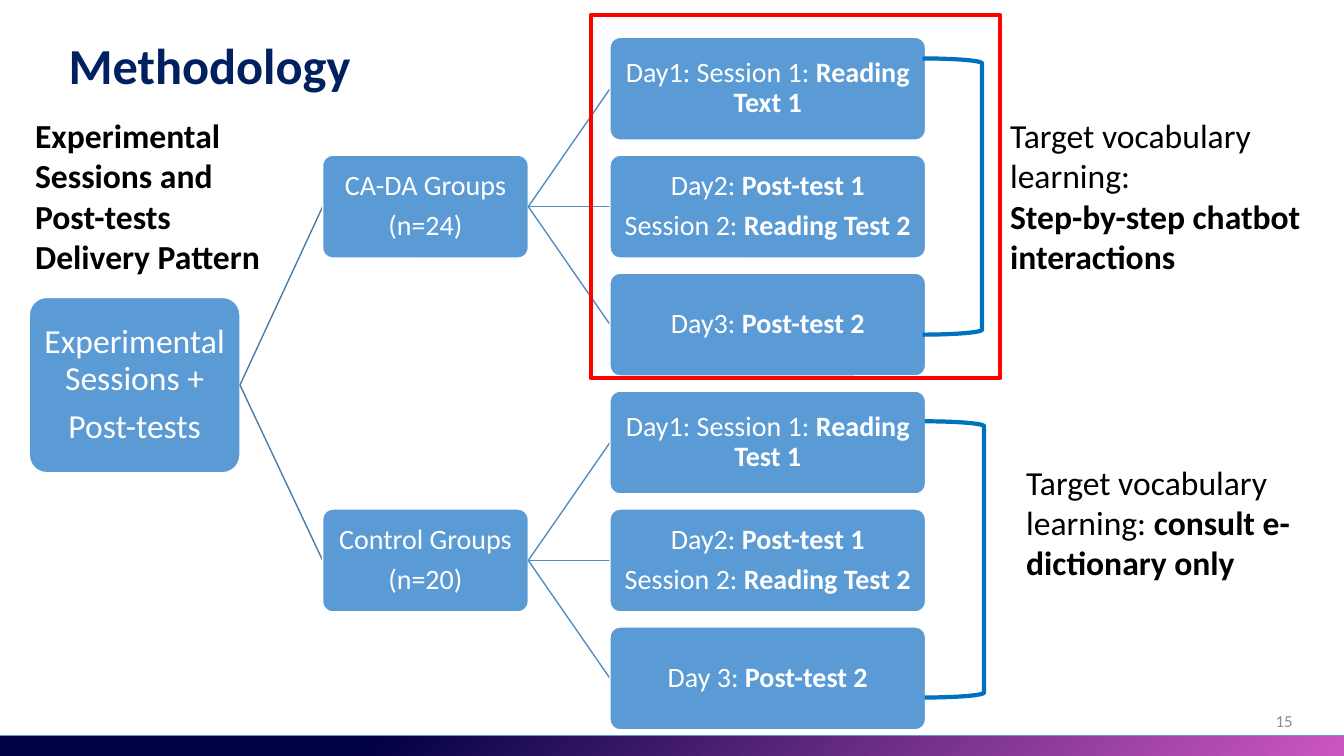
from lxml.etree import SubElement
from pptx import Presentation
from pptx.dml.color import RGBColor
from pptx.enum.shapes import MSO_CONNECTOR as CONN, MSO_SHAPE as SHAPE
from pptx.enum.text import MSO_ANCHOR as ANCHOR, PP_ALIGN as ALIGN
from pptx.oxml.ns import qn
from pptx.util import Emu, Pt

PX = 9144  # 100 px to the inch
FONT = "Calibri"
WHITE = RGBColor(0xFF, 0xFF, 0xFF)
BLACK = RGBColor(0, 0, 0)
NAVY = RGBColor(0x00, 0x20, 0x60)
GREY = RGBColor(0x8C, 0x8C, 0x8C)
BOX_BLUE = RGBColor(0x5B, 0x9B, 0xD5)
TRUNK_BLUE = RGBColor(0x49, 0x7C, 0xAB)
BRANCH_BLUE = RGBColor(0x53, 0x8D, 0xC1)
BRACKET_BLUE = RGBColor(0x00, 0x70, 0xC0)
RED = RGBColor(0xFF, 0, 0)
BAR_START = RGBColor(0x00, 0x00, 0x44)
BAR_END = RGBColor(0xCE, 0x57, 0xC1)

# Content: a text is a list of paragraphs, a paragraph a list of (words, bold)
TITLE = "Methodology"
PAGE = "15"
ROOT = [[("Experimental Sessions +", False)], [("Post-tests", False)]]
DAY2 = [[("Day2: ", False), ("Post-test 1", True)],
        [("Session 2: ", False), ("Reading Test 2", True)]]
GROUPS = [
    ([[("CA-DA Groups", False)], [("(n=24)", False)]],
     [[[("Day1: Session 1: ", False), ("Reading Text 1", True)]],
      DAY2,
      [[("Day3: ", False), ("Post-test 2", True)]]]),
    ([[("Control Groups", False)], [("(n=20)", False)]],
     [[[("Day1: Session 1: ", False), ("Reading Test 1", True)]],
      DAY2,
      [[("Day 3: ", False), ("Post-test 2", True)]]]),
]
NOTES = [
    ((25, 109, 250, 172),
     [[("Experimental Sessions and Post-tests Delivery Pattern", True)]]),
    ((992, 109, 317, 172),
     [[("Target vocabulary learning:", False)],
      [("Step-by-step chatbot interactions", True)]]),
    ((1008, 453, 300, 131),
     [[("Target vocabulary learning: ", False),
       ("consult e-dictionary only", True)]]),
]
BRACKETS = [(915, 58, 59, 274), (917, 418, 59, 274)]
RED_FRAME = (586, 15, 406, 360)

# Tree geometry in px
ROOT_BOX = (29, 295, 209, 174)
GROUP_X, GROUP_W = 320, 204
DAY_X, DAY_W = 605, 313
ROW_TOP, ROW_STEP, ROW_H = 37, 117, 102


def px(*lengths):
    return [Emu(n * PX) for n in lengths]


def write(tf, paragraphs, size, color, align=ALIGN.LEFT):
    tf.word_wrap = True
    for i, runs in enumerate(paragraphs):
        p = tf.paragraphs[0] if i == 0 else tf.add_paragraph()
        p.alignment = align
        p.font.name, p.font.size, p.font.color.rgb = FONT, Pt(size), color
        for words, bold in runs:
            r = p.add_run()
            r.text, r.font.bold = words, bold


def add_shape(kind, box, line, width, fill=None):
    sp = s.shapes.add_shape(kind, *px(*box))
    sp.shadow.inherit = False
    if fill is None:
        sp.fill.background()
    else:
        sp.fill.solid()
        sp.fill.fore_color.rgb = fill
    sp.line.color.rgb, sp.line.width = line, Pt(width)
    return sp


def add_text(box, paragraphs, size, color, align=ALIGN.LEFT):
    tf = s.shapes.add_textbox(*px(*box)).text_frame
    write(tf, paragraphs, size, color, align)
    return tf


def add_node(box, paragraphs, size, inset):
    sp = add_shape(SHAPE.ROUNDED_RECTANGLE, box, WHITE, 1, BOX_BLUE)
    sp.adjustments[0] = 0.1
    tf = sp.text_frame
    tf.vertical_anchor = ANCHOR.MIDDLE
    tf.margin_left = tf.margin_right = tf.margin_top = tf.margin_bottom = Emu(inset * PX)
    write(tf, paragraphs, size, WHITE, ALIGN.CENTER)
    for p in tf.paragraphs:
        p.line_spacing, p.space_after = 0.9, Pt(size * 0.35)


def add_link(x1, y1, x2, y2, color):
    c = s.shapes.add_connector(CONN.STRAIGHT, *px(x1, y1, x2, y2))
    c.line.color.rgb, c.line.width = color, Pt(1)
    SubElement(c._element.spPr, qn("a:effectLst"))


def row_top(row):
    return ROW_TOP + row * ROW_STEP


def row_mid(row):
    return row_top(row) + ROW_H // 2


prs = Presentation()
prs.slide_width, prs.slide_height = px(1333, 750)
s = prs.slides.add_slide(prs.slide_layouts[5])

# Bottom bar and page number
bar = add_shape(SHAPE.RECTANGLE, (-6, 730, 1339, 31), BOX_BLUE, 0.5)
bar.fill.gradient()
bar.fill.gradient_angle = 315
for stop, position, color in zip(bar.fill.gradient_stops, (0.27, 1), (BAR_START, BAR_END)):
    stop.position, stop.color.rgb = position, color
add_text((992, 695, 300, 40), [[(PAGE, False)]], 12, GREY,
         ALIGN.RIGHT).vertical_anchor = ANCHOR.MIDDLE

# Title
title = s.shapes.title
title.left, title.top, title.width, title.height = px(58, 36, 880, 89)
title.text_frame.vertical_anchor = ANCHOR.TOP
write(title.text_frame, [[(TITLE, True)]], 36, NAVY)
title.text_frame.paragraphs[0].line_spacing = 0.9

# Tree: root, groups, days
add_node(ROOT_BOX, ROOT, 24, 2)
root_right = ROOT_BOX[0] + ROOT_BOX[2]
root_mid = ROOT_BOX[1] + ROOT_BOX[3] // 2
for g, (group, days) in enumerate(GROUPS):
    first = g * len(days)
    middle = first + 1
    add_link(root_right, root_mid, GROUP_X, row_mid(middle), TRUNK_BLUE)
    add_node((GROUP_X, row_top(middle), GROUP_W, ROW_H), group, 20, 1)
    for row, day in enumerate(days, first):
        add_link(GROUP_X + GROUP_W, row_mid(middle), DAY_X, row_mid(row), BRANCH_BLUE)
        add_node((DAY_X, row_top(row), DAY_W, ROW_H), day, 20, 1)

# Brackets, side notes and red frame
for box in BRACKETS:
    add_shape(SHAPE.RIGHT_BRACKET, box, BRACKET_BLUE, 3)
for box, paragraphs in NOTES:
    add_text(box, paragraphs, 24, BLACK)
add_shape(SHAPE.RECTANGLE, RED_FRAME, RED, 3)

prs.save("out.pptx")
